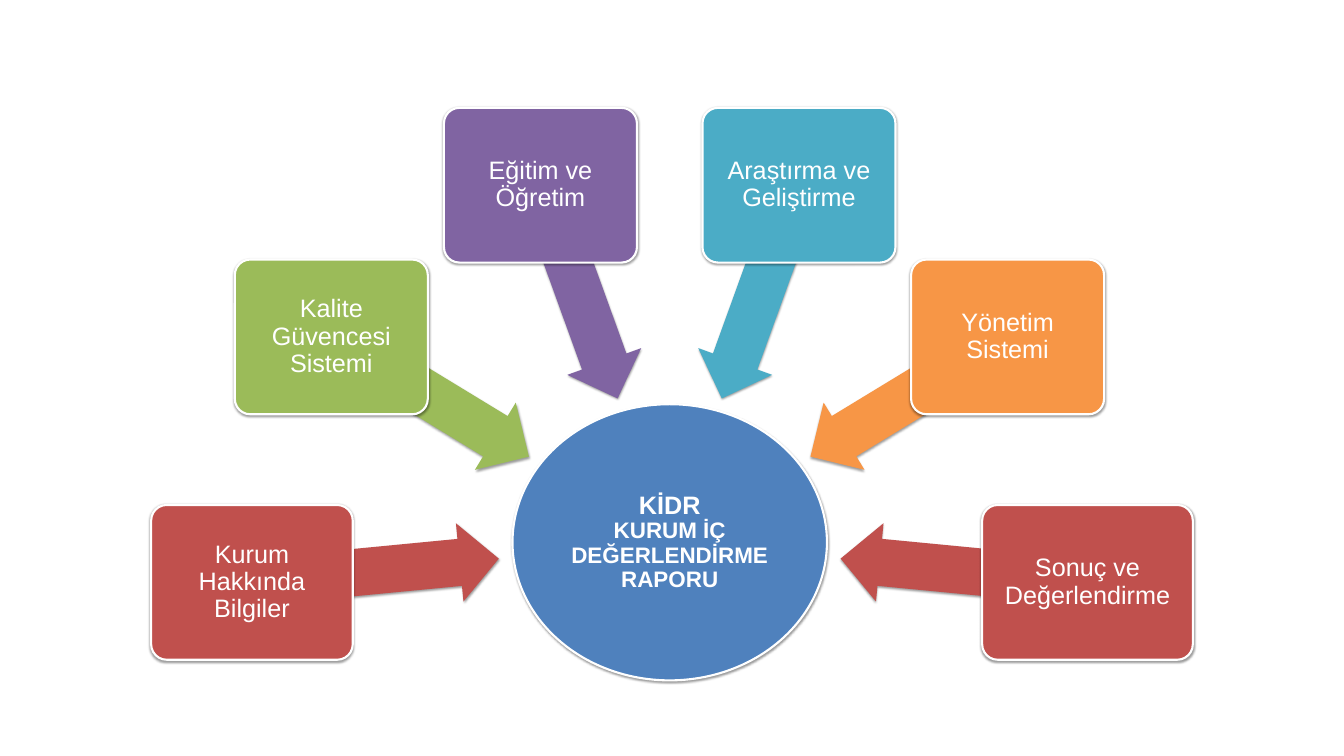
from dataclasses import dataclass

from lxml import etree
from pptx import Presentation
from pptx import util as u
from pptx.dml.color import RGBColor
from pptx.enum import shapes, text
from pptx.oxml.ns import qn

PX = 9144
MIRROR_SUM = 2658
BOX_H = 307
ARROW_H = 156
WHITE = "FFFFFF"


@dataclass
class Tier:
    box_top: int
    arrow_left: int
    arrow_top: int
    arrow_w: int
    angle: float


@dataclass
class Topic:
    label: str
    color: str
    tier: Tier
    left: int
    width: int = 383
    on_right: bool = False


LOW = Tier(1002, 498, 1054, 493, 174.5)
MIDDLE = Tier(515, 625, 709, 458, 211.3)
HIGH = Tier(214, 924, 501, 450, 250.1)

TOPICS = [
    Topic("Kurum Hakkında Bilgiler", "C0504D", LOW, 300, 400),
    Topic("Kalite Güvencesi Sistemi", "9BBB59", MIDDLE, 466),
    Topic("Eğitim ve Öğretim", "8064A2", HIGH, 881),
    Topic("Araştırma ve Geliştirme", "4BACC6", HIGH, 1394, on_right=True),
    Topic("Yönetim Sistemi", "F79646", MIDDLE, 1808, on_right=True),
    Topic("Sonuç ve Değerlendirme", "C0504D", LOW, 1949, 418, on_right=True),
]


def px(n: int) -> u.Emu:
    return u.Emu(n * PX)


def rgb(color: str) -> RGBColor:
    return RGBColor.from_string(color)


def add_shadow(sp) -> None:
    sp.shadow.inherit = False
    effects = sp._element.spPr.find(qn("a:effectLst"))
    shadow = etree.SubElement(effects, qn("a:outerShdw"), blurRad="40000",
                              dist="20000", dir="5400000", rotWithShape="0")
    black = etree.SubElement(shadow, qn("a:srgbClr"), val="000000")
    etree.SubElement(black, qn("a:alpha"), val="38000")


def add_shape(s, kind, left: int, top: int, width: int, height: int,
              color: str, outlined: bool = True):
    sp = s.shapes.add_shape(kind, px(left), px(top), px(width), px(height))
    sp.fill.solid()
    sp.fill.fore_color.rgb = rgb(color)
    if outlined:
        sp.line.color.rgb = rgb(WHITE)
        sp.line.width = u.Pt(3)
    else:
        sp.line.fill.background()
    add_shadow(sp)
    return sp


def write(sp, lines: list[tuple[str, int]], inset: int, bold: bool = False) -> None:
    tf = sp.text_frame
    tf.word_wrap = True
    tf.vertical_anchor = text.MSO_ANCHOR.MIDDLE
    tf.margin_left = tf.margin_right = tf.margin_top = tf.margin_bottom = px(inset)
    for i, (line, size) in enumerate(lines):
        p = tf.add_paragraph() if i else tf.paragraphs[0]
        p.text = line
        p.alignment = text.PP_ALIGN.CENTER
        p.line_spacing = 0.9
        p.font.name = "Arial"
        p.font.size = u.Pt(size)
        p.font.bold = bold
        p.font.color.rgb = rgb(WHITE)


def add_topic(s, topic: Topic) -> None:
    tier = topic.tier
    left, angle = tier.arrow_left, tier.angle
    if topic.on_right:
        left = MIRROR_SUM - left - tier.arrow_w
        angle = (180 - angle) % 360
    arrow = add_shape(s, shapes.MSO_SHAPE.LEFT_ARROW, left, tier.arrow_top,
                      tier.arrow_w, ARROW_H, topic.color, outlined=False)
    arrow.adjustments[0] = 0.6
    arrow.adjustments[1] = 0.5
    arrow.rotation = angle
    box = add_shape(s, shapes.MSO_SHAPE.ROUNDED_RECTANGLE, topic.left,
                    tier.box_top, topic.width, BOX_H, topic.color)
    box.adjustments[0] = 0.1
    write(box, [(topic.label, 36)], 7)


def main() -> None:
    prs = Presentation()
    prs.slide_width, prs.slide_height = px(2667), px(1500)
    s = prs.slides.add_slide(prs.slide_layouts[6])
    hub = add_shape(s, shapes.MSO_SHAPE.OVAL, 1017, 802, 624, 548, "4F81BD")
    write(hub, [("KİDR", 36), ("KURUM İÇ DEĞERLENDİRME RAPORU", 32)], 3, bold=True)
    for topic in TOPICS:
        add_topic(s, topic)
    prs.save("out.pptx")


if __name__ == "__main__":
    main()
